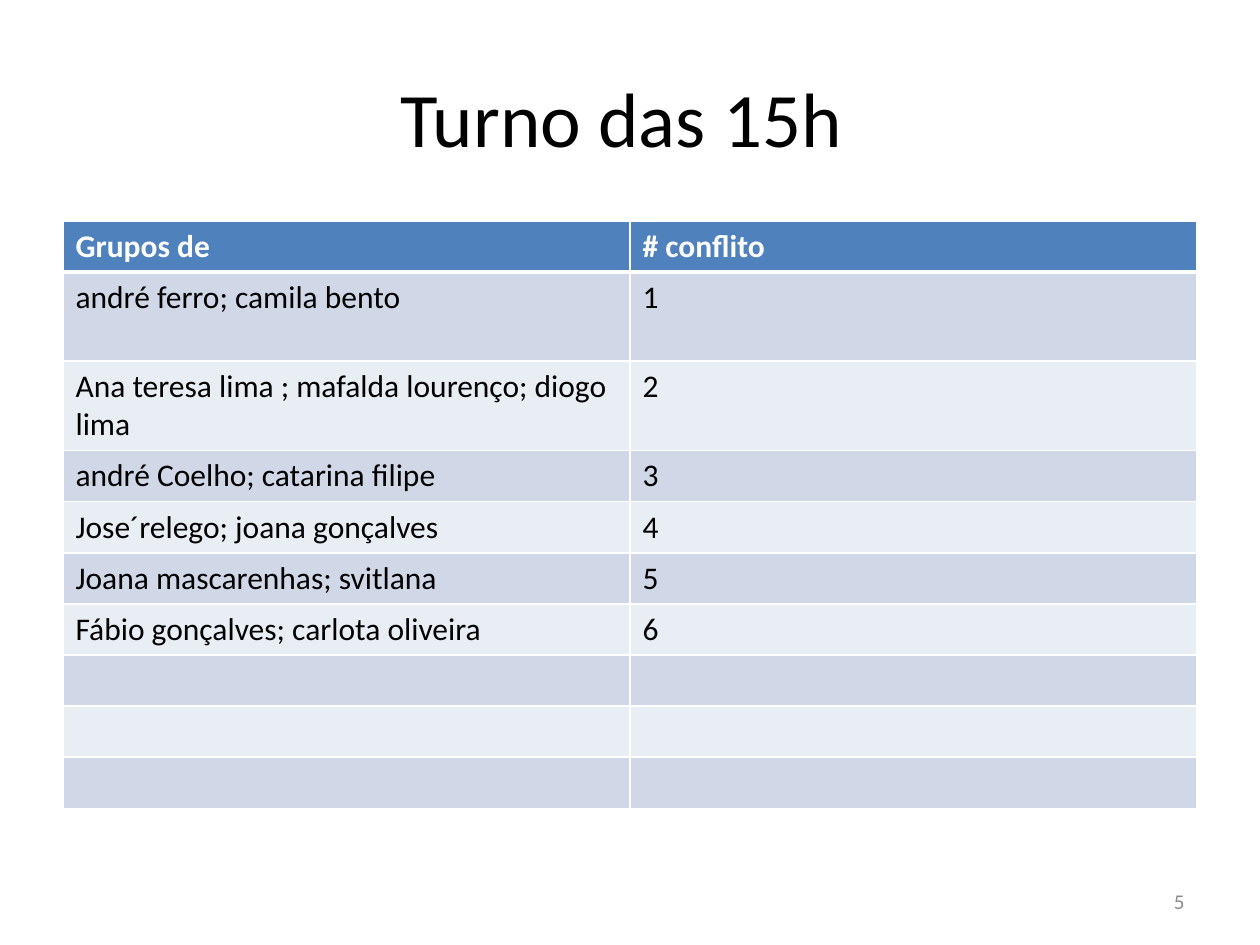
from dataclasses import dataclass

from lxml import etree
from pptx import Presentation
from pptx import util as u
from pptx.dml.color import RGBColor
from pptx.enum import text
from pptx.oxml.ns import qn

EMU_PER_PX = 914400 / 126


@dataclass(frozen=True)
class Theme:
    font: str = "Calibri"
    ink: str = "000000"
    white: str = "FFFFFF"
    number: str = "8C8C8C"
    header: str = "4F81BD"
    bands: tuple = ("D0D8E8", "E9EDF4")
    title_size: int = 44
    table_size: int = 18
    number_size: int = 12
    border: int = 1
    header_border: int = 3


THEME = Theme()

HEADER = ("Grupos de", "# conflito")
GROUPS = (
    "andré ferro; camila bento",
    "Ana teresa lima ; mafalda lourenço; diogo lima",
    "andré Coelho; catarina filipe",
    "Jose´relego; joana gonçalves",
    "Joana mascarenhas; svitlana",
    "Fábio gonçalves; carlota oliveira",
)
EMPTY_ROWS = 3
ROW_HEIGHT, TALL_ROW_HEIGHT = 51, 89
TALL_ROWS = (1, 2)


def px(length):
    return u.Emu(round(length * EMU_PER_PX))


def add_run(paragraph, content, size, color, bold=False):
    run = paragraph.add_run()
    run.text = content
    run.font.name = THEME.font
    run.font.size = u.Pt(size)
    run.font.bold = bold
    run.font.color.rgb = RGBColor.from_string(color)


def set_title(slide, content):
    title = slide.shapes.title
    title.left, title.top, title.width, title.height = map(px, (63, 38, 1134, 157))
    title.text_frame.vertical_anchor = text.MSO_ANCHOR.MIDDLE
    paragraph = title.text_frame.paragraphs[0]
    paragraph.alignment = text.PP_ALIGN.CENTER
    add_run(paragraph, content, THEME.title_size, THEME.ink)


def set_borders(cell, top, bottom):
    """Draw white cell borders; top and bottom widths are in points."""
    properties = cell._tc.get_or_add_tcPr()
    widths = {"a:lnL": THEME.border, "a:lnR": THEME.border, "a:lnT": top, "a:lnB": bottom}
    for index, (tag, width) in enumerate(widths.items()):
        line = etree.Element(qn(tag), w=str(u.Pt(width)))
        fill = etree.SubElement(line, qn("a:solidFill"))
        etree.SubElement(fill, qn("a:srgbClr"), val=THEME.white)
        properties.insert(index, line)


def fill_cell(cell, content, row):
    is_header = row == 0
    color = THEME.header if is_header else THEME.bands[(row - 1) % 2]
    cell.fill.solid()
    cell.fill.fore_color.rgb = RGBColor.from_string(color)
    set_borders(
        cell,
        top=THEME.header_border if row == 1 else THEME.border,
        bottom=THEME.header_border if is_header else THEME.border,
    )
    if content:
        add_run(cell.text_frame.paragraphs[0], content, THEME.table_size,
                THEME.white if is_header else THEME.ink, bold=is_header)


def add_group_table(slide):
    numbered = [(group, str(number)) for number, group in enumerate(GROUPS, 1)]
    rows = [HEADER, *numbered, *[("", "")] * EMPTY_ROWS]
    heights = [TALL_ROW_HEIGHT if row in TALL_ROWS else ROW_HEIGHT for row in range(len(rows))]
    table = slide.shapes.add_table(
        len(rows), len(HEADER), px(63), px(221), px(1134), px(sum(heights))
    ).table
    for row, (contents, height) in enumerate(zip(rows, heights)):
        table.rows[row].height = px(height)
        for column, content in enumerate(contents):
            fill_cell(table.cell(row, column), content, row)


def add_slide_number(slide, number):
    box = slide.shapes.add_textbox(px(903), px(876), px(294), px(50))
    frame = box.text_frame
    frame.word_wrap = True
    frame.vertical_anchor = text.MSO_ANCHOR.MIDDLE
    paragraph = frame.paragraphs[0]
    paragraph.alignment = text.PP_ALIGN.RIGHT
    add_run(paragraph, number, THEME.number_size, THEME.number)


def main():
    presentation = Presentation()
    presentation.slide_width, presentation.slide_height = px(1260), px(945)
    title_only = presentation.slide_layouts.get_by_name("Title Only")
    slide = presentation.slides.add_slide(title_only)
    set_title(slide, "Turno das 15h ")
    add_group_table(slide)
    add_slide_number(slide, "5")
    presentation.save("out.pptx")


if __name__ == "__main__":
    main()
